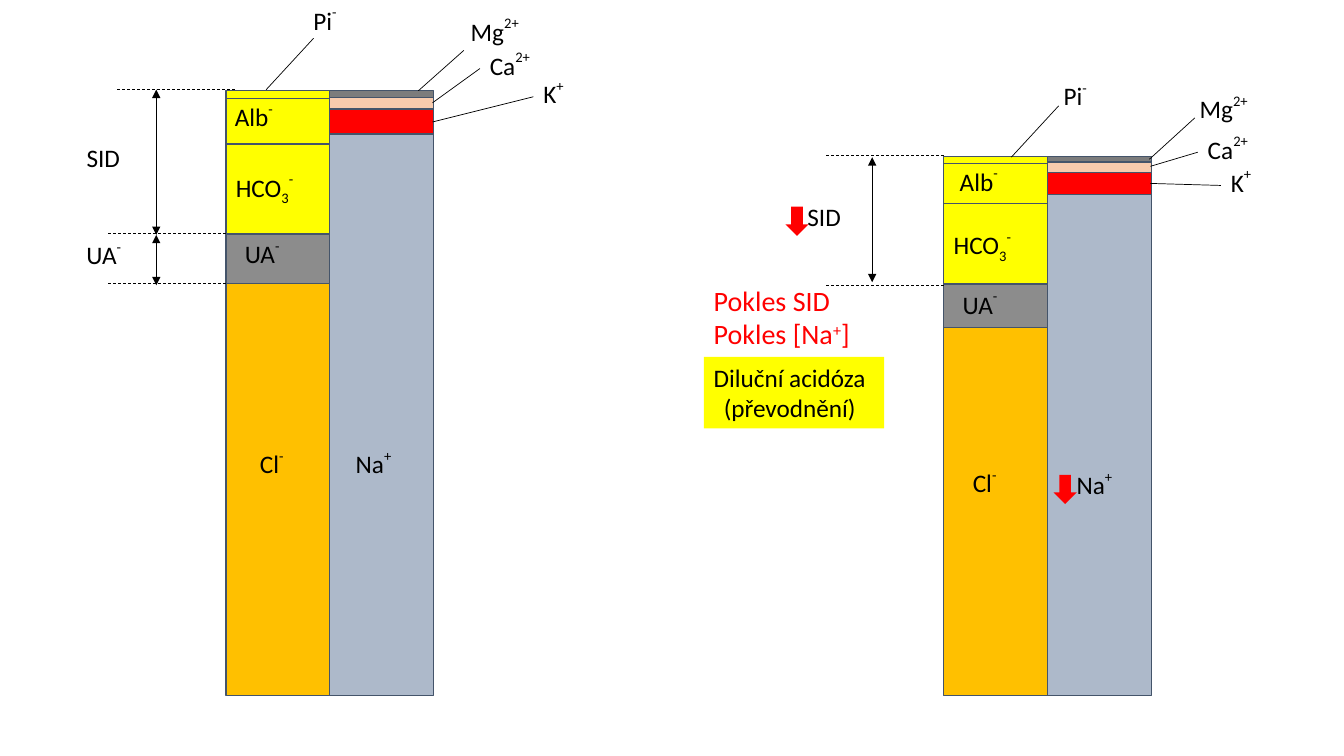
from lxml import etree
from pptx import Presentation
from pptx import util as u
from pptx.dml.color import RGBColor
from pptx.enum import dml, shapes, text
from pptx.oxml.ns import qn

PX = 9144
FLOOR = 690
FULL_TOP = 90
BAR_WIDTH = 103
COLORS = {
    "yellow": "FFFF00", "gray": "8C8C8C", "orange": "FFC000", "blue": "ADB9CA",
    "red": "FF0000", "peach": "F8CBAD", "dark": "7C7C7C", "outline": "44546A",
    "black": "000000",
}
ANIONS = [(90, "yellow"), (98, "yellow"), (143, "yellow"), (232, "gray"), (281, "orange")]
CATIONS = [(90, "dark"), (97, "peach"), (108, "red"), (133, "blue")]
IONS = {
    "Pi": ([("Pi", 0), ("-", 50)], 56),
    "Mg": ([("Mg", 0), ("2+", 50)], 91),
    "Ca": ([("Ca", 0), ("2+", 50)], 81),
    "K": ([("K", 0), ("+", 50)], 57),
    "Na": ([("Na", 0), ("+", 50)], 72),
    "Cl": ([("Cl", 0), ("-", 50)], 59),
    "UA": ([("UA", 0), ("-", 50)], 76),
    "HCO3": ([("HCO", 0), ("3", -25), ("-", 50)], 110),
    "Alb": ([("Alb", 0), ("-", 50)], 78),
    "SID": ([("SID", 0)], 75),
}


def px(*lengths):
    return [u.Emu(length * PX) for length in lengths]


def rgb(name):
    return RGBColor.from_string(COLORS[name])


def add_block(slide, kind, box, fill, outline=None):
    shape = slide.shapes.add_shape(kind, *px(*box))
    shape.shadow.inherit = False
    shape.fill.solid()
    shape.fill.fore_color.rgb = rgb(fill)
    if outline:
        shape.line.color.rgb = rgb(outline)
        shape.line.width = u.Pt(1)
    else:
        shape.line.fill.background()


def add_text(slide, box, paragraphs, size=18, color="black", fill=None):
    shape = slide.shapes.add_textbox(*px(*box))
    if fill:
        shape.fill.solid()
        shape.fill.fore_color.rgb = rgb(fill)
    frame = shape.text_frame
    frame.word_wrap = False
    frame.auto_size = text.MSO_AUTO_SIZE.SHAPE_TO_FIT_TEXT
    for index, pieces in enumerate(paragraphs):
        paragraph = frame.paragraphs[0] if index == 0 else frame.add_paragraph()
        paragraph.font.name = "Calibri"
        paragraph.font.size = u.Pt(size)
        paragraph.font.color.rgb = rgb(color)
        for words, baseline in pieces:
            run = paragraph.add_run()
            run.text = words
            if baseline:
                run._r.get_or_add_rPr().set("baseline", str(baseline * 1000))
    return frame


def add_line(slide, start_x, start_y, end_x, end_y, dashed=False, arrows=False):
    line = slide.shapes.add_connector(
        shapes.MSO_CONNECTOR.STRAIGHT, *px(start_x, start_y, end_x, end_y))
    line.line.color.rgb = rgb("black")
    line.line.width = u.Pt(0.5)
    if dashed:
        line.line.dash_style = dml.MSO_LINE.DASH
    if arrows:
        outline = line.line._get_or_add_ln()
        for end in ("a:headEnd", "a:tailEnd"):
            etree.SubElement(outline, qn(end), type="triangle")
    etree.SubElement(line._element.spPr, qn("a:effectLst"))


def add_stack(slide, left, top, layers):
    scale = (FLOOR - top) / (FLOOR - FULL_TOP)
    edges = [FLOOR - round((FLOOR - edge) * scale) for edge, _ in layers] + [FLOOR]
    for (_, fill), upper, lower in zip(layers, edges, edges[1:]):
        add_block(slide, shapes.MSO_SHAPE.RECTANGLE,
                  (left, upper, BAR_WIDTH, lower - upper), fill, "outline")


def add_ionogram(slide, left, top, labels, pointers, guides, spans):
    add_stack(slide, left + BAR_WIDTH, top, CATIONS)
    add_stack(slide, left, top, ANIONS)
    for ion, x, y in labels:
        pieces, width = IONS[ion]
        add_text(slide, (x, y, width, 50), [pieces])
    for pointer in pointers:
        add_line(slide, *pointer)
    for start, end, y in guides:
        add_line(slide, start, y, end, y, dashed=True)
    for x, upper, lower in spans:
        add_line(slide, x, upper, x, lower, arrows=True)


def add_conclusion(slide):
    add_text(slide, (698, 276, 164, 77),
             [[("Pokles SID", 0)], [("Pokles [Na", 0), ("+", 30), ("]", 0)]],
             size=20, color="red")
    frame = add_text(slide, (698, 354, 179, 71),
                     [[("Diluční acidóza", 0)], [("(převodnění)", 0)]], fill="yellow")
    frame.paragraphs[1].alignment = text.PP_ALIGN.CENTER
    for left, top in ((779, 205), (1045, 471)):
        add_block(slide, shapes.MSO_SHAPE.DOWN_ARROW, (left, top, 23, 29), "red")


def main():
    presentation = Presentation()
    presentation.slide_width, presentation.slide_height = px(1333, 750)
    slide = presentation.slides.add_slide(presentation.slide_layouts[6])
    add_ionogram(
        slide, 224, FULL_TOP,
        labels=[("Pi", 301, -2), ("Mg", 457, 9), ("Ca", 476, 43), ("K", 529, 71),
                ("Na", 343, 438), ("Cl", 248, 438), ("UA", 233, 230),
                ("HCO3", 224, 164), ("Alb", 223, 94), ("SID", 76, 136), ("UA", 76, 231)],
        pointers=[(460, 50, 415, 90), (476, 68, 429, 102),
                  (529, 96, 429, 121), (264, 89, 311, 38)],
        guides=[(233, 115, 89), (224, 106, 232), (224, 106, 281)],
        spans=[(155, 89, 233), (155, 233, 283)])
    add_ionogram(
        slide, 936, 155,
        labels=[("Pi", 1045, 73), ("Mg", 1180, 86), ("Ca", 1188, 126), ("K", 1211, 159),
                ("Na", 1058, 459), ("Cl", 955, 457), ("UA", 945, 280),
                ("HCO3", 936, 221), ("Alb", 942, 158), ("SID", 791, 195)],
        pointers=[(1185, 117, 1140, 158), (1188, 151, 1141, 165),
                  (1211, 184, 1141, 182), (1003, 156, 1050, 105)],
        guides=[(936, 819, 154), (936, 818, 283)],
        spans=[(865, 156, 280)])
    add_conclusion(slide)
    presentation.save("out.pptx")


if __name__ == "__main__":
    main()
